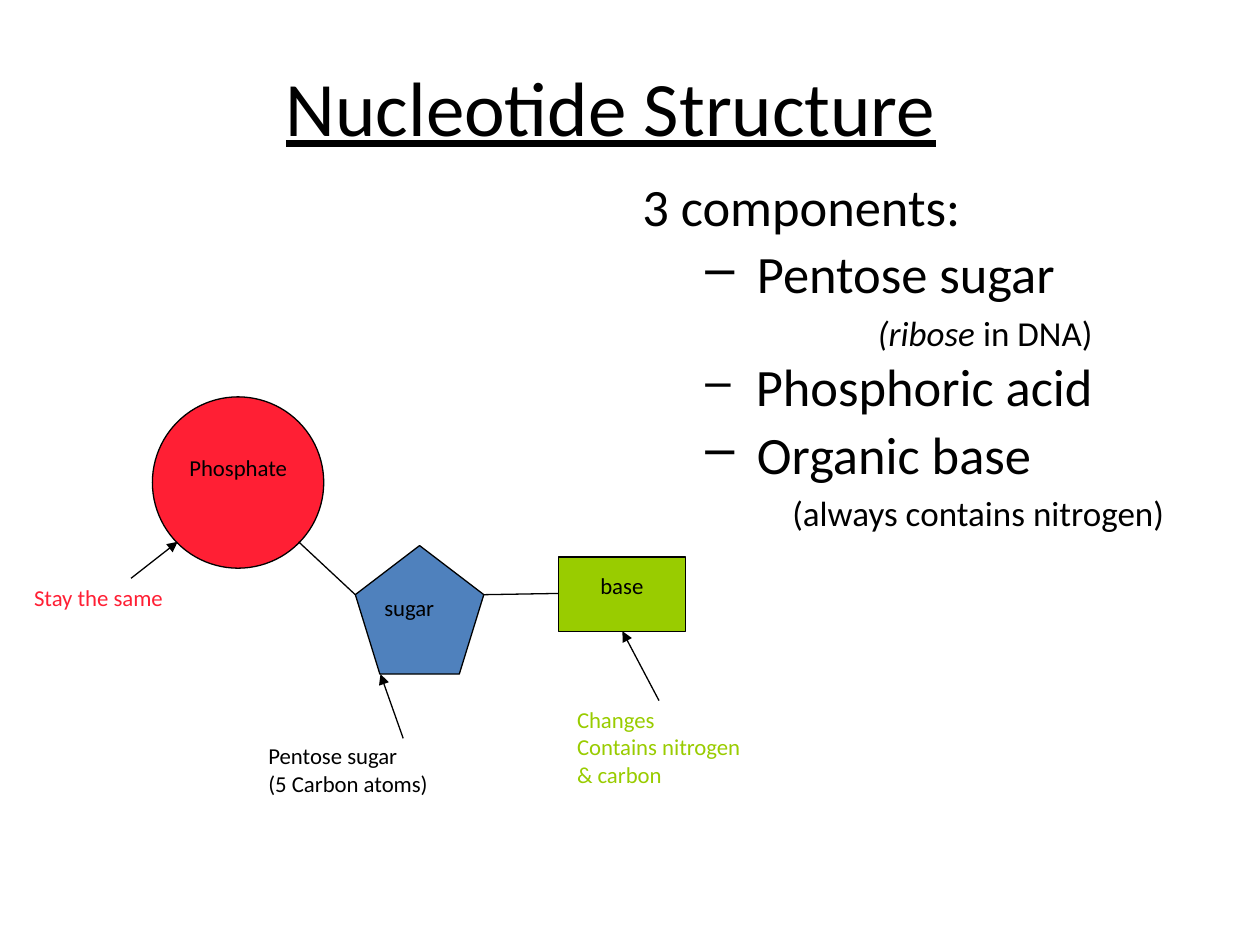
from lxml import etree
from pptx import Presentation
from pptx.dml.color import RGBColor
from pptx.enum import shapes, text
from pptx.oxml import ns
from pptx.util import Inches, Pt

BLACK, RED, GREEN, BLUE = "000000", "FF1F34", "99CC00", "4F81BD"
LEFT, CENTER = text.PP_ALIGN.LEFT, text.PP_ALIGN.CENTER
SHAPE = shapes.MSO_SHAPE

TITLE = "Nucleotide Structure"
COMPONENTS = [
    # runs, size, margin, indent, bullet percent, space before
    ([("3 components:", False)], 30, 0, 0, 0, 6),
    ([("Pentose sugar", False)], 30, 0.91, -0.41, 100, 6),
    ([("(ribose ", True), ("in DNA)", False)], 20, 1.87, 0, 0, 6),
    ([("Phosphoric acid", False)], 30, 0.9, -0.4, 87, 4.5),
    ([("Organic base", False)], 30, 0.91, -0.41, 100, 6),
    ([("(always contains nitrogen)", False)], 20, 1.19, 0, 0, 6),
]
PARTS = [
    (SHAPE.OVAL, (1.21, 3.15, 1.36, 1.36), RED),
    (SHAPE.REGULAR_PENTAGON, (2.82, 4.33, 1.02, 1.02), BLUE),
    (SHAPE.RECTANGLE, (4.43, 4.42, 1.01, 0.59), GREEN),
]
LABELS = [
    (["Phosphate"], (1.13, 3.56, 1.52, 0.29), BLACK, CENTER),
    (["sugar"], (2.98, 4.67, 0.85, 0.29), BLACK, LEFT),
    (["base"], (4.51, 4.5, 0.85, 0.29), BLACK, CENTER),
    (["Stay the same"], (0.2, 4.59, 1.69, 0.75), RED, LEFT),
    (["Changes", "Contains nitrogen & carbon"], (4.51, 5.56, 1.44, 1.39), GREEN, LEFT),
    (["Pentose sugar", "(5 Carbon atoms)"], (2.06, 5.85, 2.28, 0.5), BLACK, LEFT),
]
BONDS = [(2.37, 4.3, 2.82, 4.72), (3.84, 4.72, 4.43, 4.71)]
POINTERS = [(1.04, 4.59, 1.41, 4.3), (3.2, 5.86, 3.02, 5.35), (5.23, 5.56, 4.94, 5.01)]


def rgb(value):
    return RGBColor.from_string(value)


def set_font(p, size, color=BLACK):
    p.font.name = "Calibri"
    p.font.size = Pt(size)
    p.font.color.rgb = rgb(color)


def add_text(s, box, inset=(0.1, 0.05)):
    tf = s.shapes.add_textbox(*map(Inches, box)).text_frame
    tf.word_wrap = True
    tf.margin_left = tf.margin_right = Inches(inset[0])
    tf.margin_top = tf.margin_bottom = Inches(inset[1])
    return tf


def add_paragraph(tf, index):
    return tf.add_paragraph() if index else tf.paragraphs[0]


def set_bullet(p, margin, indent, percent):
    pPr = p._p.get_or_add_pPr()
    pPr.set("marL", str(Inches(margin)))
    pPr.set("indent", str(Inches(indent)))
    if percent:
        size = etree.Element(ns.qn("a:buSzPct"), val=str(percent * 1000))
        bullet = etree.Element(ns.qn("a:buChar"), char="–")
        props = pPr.find(ns.qn("a:defRPr"))
        props.addprevious(size)
        props.addprevious(bullet)


def add_line(s, ends, arrow=False):
    line = s.shapes.add_connector(shapes.MSO_CONNECTOR.STRAIGHT, *map(Inches, ends))
    line.line.color.rgb = rgb(BLACK)
    line.line.width = Pt(0.75)
    if arrow:
        etree.SubElement(line.line._get_or_add_ln(), ns.qn("a:tailEnd"), type="triangle")
    etree.SubElement(line._element.spPr, ns.qn("a:effectLst"))


def main():
    prs = Presentation()
    prs.slide_width, prs.slide_height = Inches(10), Inches(7.5)
    s = prs.slides.add_slide(prs.slide_layouts[6])

    tf = add_text(s, (0.35, 0.21, 9, 1.25))
    tf.vertical_anchor = text.MSO_ANCHOR.MIDDLE
    p = tf.paragraphs[0]
    p.text, p.alignment = TITLE, CENTER
    set_font(p, 44)
    p.font.underline = True

    tf = add_text(s, (5, 1.39, 4.8, 3.15))
    for i, (runs, size, margin, indent, percent, before) in enumerate(COMPONENTS):
        p = add_paragraph(tf, i)
        for words, italic in runs:
            r = p.add_run()
            r.text = words
            r.font.italic = italic
        p.line_spacing = 0.9
        p.space_before = Pt(before)
        set_font(p, size)
        set_bullet(p, margin, indent, percent)

    for kind, box, color in PARTS:
        sp = s.shapes.add_shape(kind, *map(Inches, box))
        sp.shadow.inherit = False
        sp.fill.solid()
        sp.fill.fore_color.rgb = rgb(color)
        sp.line.color.rgb = rgb(BLACK)
        sp.line.width = Pt(0.75)

    for ends in BONDS:
        add_line(s, ends)

    for lines, box, color, align in LABELS:
        tf = add_text(s, box, (0.07, 0.04))
        for i, words in enumerate(lines):
            p = add_paragraph(tf, i)
            p.text, p.alignment = words, align
            set_font(p, 13, color)

    for ends in POINTERS:
        add_line(s, ends, arrow=True)

    prs.save("out.pptx")


if __name__ == "__main__":
    main()
